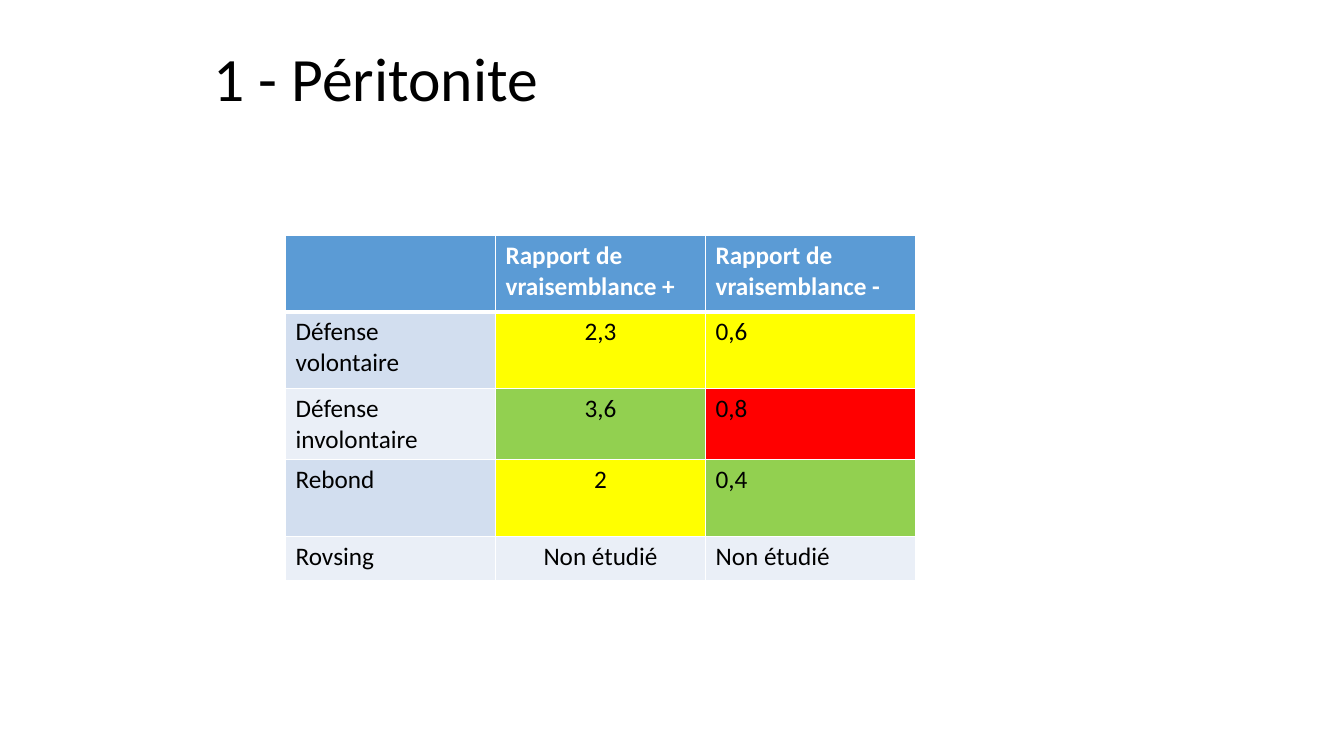
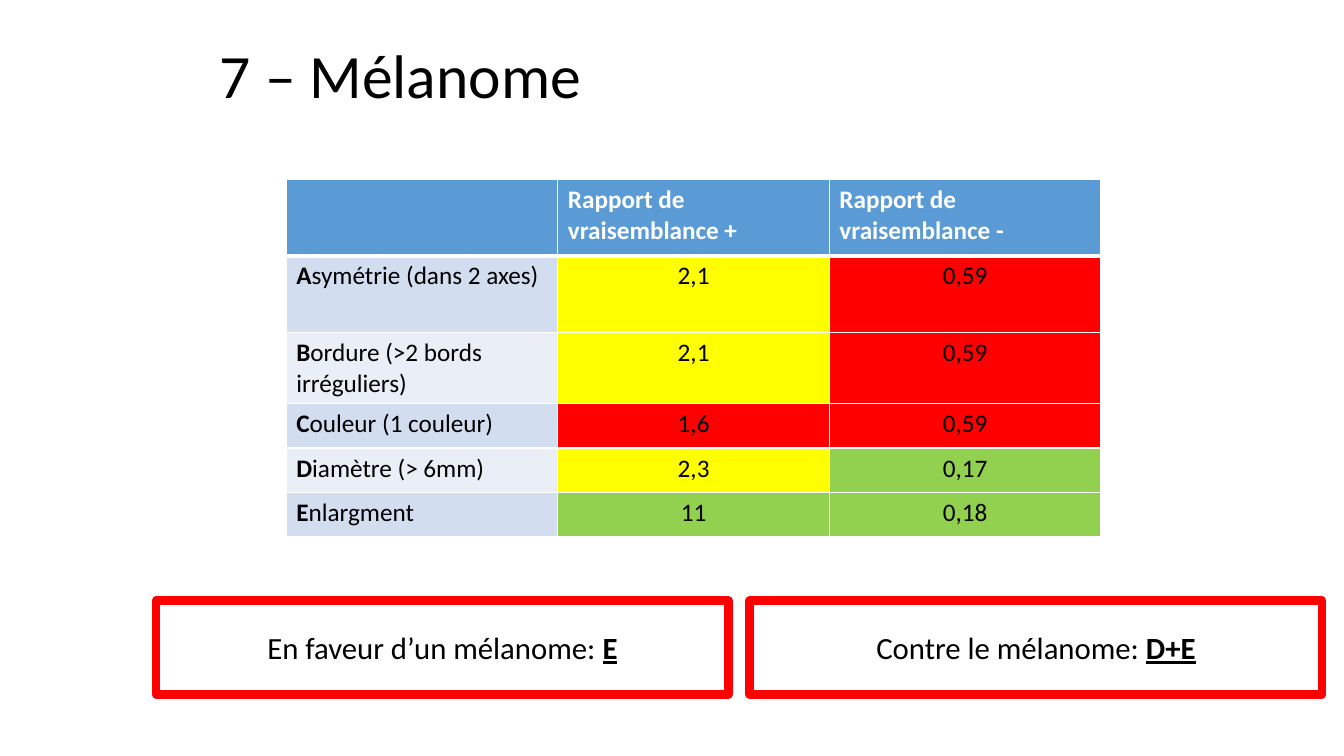
from dataclasses import dataclass

from lxml import etree
from pptx import Presentation
from pptx.dml.color import RGBColor
from pptx.enum import shapes, text
from pptx.oxml import ns
from pptx.util import Pt

# Shared style
FONT = "Calibri"
BLACK, WHITE = "000000", "FFFFFF"
HEADER = "5B9BD5"
BANDS = ("D2DEEF", "EAEFF7")
YELLOW, GREEN, RED = "FFFF00", "92D050", "FF0000"
TALL, WRAPPED, SHORT = 54.7, 51, 31.7  # row heights
HEADINGS = ("", "Rapport de vraisemblance +", "Rapport de vraisemblance -")
LEFT, CENTER = text.PP_ALIGN.LEFT, text.PP_ALIGN.CENTER


@dataclass
class Run:
    text: str
    bold: bool = False
    underline: bool = False


@dataclass
class Score:
    text: str
    fill: str | None = None  # None keeps the colour of the row band


@dataclass
class Sign:
    label: list[Run]
    positive: Score
    negative: Score
    height: float


@dataclass
class Conclusion:
    left: float
    label: str
    signs: str


def color(value: str) -> RGBColor:
    return RGBColor.from_string(value)


def write(frame, runs: list[Run], *, size: float = 18, ink: str = BLACK,
          align=LEFT, line_spacing: float | None = None) -> None:
    paragraph = frame.paragraphs[0]
    paragraph.alignment = align
    paragraph.line_spacing = line_spacing
    for part in runs:
        run = paragraph.add_run()
        run.text = part.text
        run.font.name = FONT
        run.font.size = Pt(size)
        run.font.color.rgb = color(ink)
        run.font.bold = part.bold
        run.font.underline = part.underline


def add_title(slide, title: str, left: float, top: float, width: float) -> None:
    box = slide.shapes.add_textbox(Pt(left), Pt(top), Pt(width), Pt(104))
    box.text_frame.word_wrap = True
    write(box.text_frame, [Run(title)], size=44, line_spacing=0.9)


def set_borders(cell, top: float, bottom: float) -> None:
    properties = cell._tc.get_or_add_tcPr()
    for side, width in (("L", 1), ("R", 1), ("T", top), ("B", bottom)):
        line = etree.SubElement(properties, ns.qn(f"a:ln{side}"), w=str(Pt(width)))
        fill = etree.SubElement(line, ns.qn("a:solidFill"))
        etree.SubElement(fill, ns.qn("a:srgbClr"), val=WHITE)


def fill_cell(cell, fill: str, runs: list[Run], *, top: float = 1,
              bottom: float = 1, **text_format) -> None:
    set_borders(cell, top, bottom)
    cell.fill.solid()
    cell.fill.fore_color.rgb = color(fill)
    write(cell.text_frame, runs, **text_format)


def add_sign_table(slide, signs: list[Sign], left: float, top: float,
                   column_width: float, negative_align) -> None:
    heights = [TALL] + [sign.height for sign in signs]
    frame = slide.shapes.add_table(
        len(heights), len(HEADINGS), Pt(left), Pt(top),
        Pt(column_width * len(HEADINGS)), Pt(sum(heights)))
    table = frame.table
    table.horz_banding = False
    for column in table.columns:
        column.width = Pt(column_width)
    for row, height in zip(table.rows, heights):
        row.height = Pt(height)

    # Header row
    for index, heading in enumerate(HEADINGS):
        runs = [Run(heading, bold=True)] if heading else []
        fill_cell(table.cell(0, index), HEADER, runs, bottom=3, ink=WHITE)

    # One row per clinical sign
    for row, sign in enumerate(signs, start=1):
        band = BANDS[(row - 1) % 2]
        line = 3 if row == 1 else 1
        fill_cell(table.cell(row, 0), band, sign.label, top=line)
        for index, (score, align) in enumerate(
                ((sign.positive, CENTER), (sign.negative, negative_align)), start=1):
            fill_cell(table.cell(row, index), score.fill or band,
                      [Run(score.text)], top=line, align=align)


def add_conclusion(slide, conclusion: Conclusion) -> None:
    box = slide.shapes.add_shape(shapes.MSO_SHAPE.RECTANGLE, Pt(conclusion.left),
                                 Pt(429), Pt(409), Pt(67))
    box.shadow.inherit = False
    box.fill.background()
    box.line.color.rgb = color(RED)
    box.line.width = Pt(6)
    box.text_frame.word_wrap = True
    box.text_frame.vertical_anchor = text.MSO_ANCHOR.MIDDLE
    write(box.text_frame,
          [Run(conclusion.label), Run(conclusion.signs, bold=True, underline=True)],
          size=22, align=CENTER)


def initial(label: str) -> list[Run]:
    return [Run(label[0], bold=True), Run(label[1:])]


PERITONITIS = [
    Sign([Run("Défense volontaire")], Score("2,3", YELLOW), Score("0,6", YELLOW), TALL),
    Sign([Run("Défense involontaire")], Score("3,6", GREEN), Score("0,8", RED), WRAPPED),
    Sign([Run("Rebond")], Score("2", YELLOW), Score("0,4", GREEN), TALL),
    Sign([Run("Rovsing")], Score("Non étudié"), Score("Non étudié"), SHORT),
]
MELANOMA = [
    Sign(initial("Asymétrie (dans 2 axes)"), Score("2,1", YELLOW), Score("0,59", RED), TALL),
    Sign(initial("Bordure (>2 bords irréguliers)"), Score("2,1", YELLOW),
         Score("0,59", RED), WRAPPED),
    Sign(initial("Couleur (1 couleur)"), Score("1,6", RED), Score("0,59", RED), SHORT),
    Sign(initial("Diamètre (> 6mm)"), Score("2,3", YELLOW), Score("0,17", GREEN), SHORT),
    Sign(initial("Enlargment"), Score("11", GREEN), Score("0,18", GREEN), SHORT),
]
CONCLUSIONS = [
    Conclusion(111.5, "En faveur d’un mélanome: ", "E"),
    Conclusion(535.5, "Contre le mélanome: ", "D+E"),
]


def main() -> None:
    presentation = Presentation()
    presentation.slide_width, presentation.slide_height = Pt(960), Pt(540)
    blank = presentation.slide_layouts[6]

    # Peritonitis
    slide = presentation.slides.add_slide(blank)
    add_title(slide, "1 - Péritonite", 145.5, 31, 828)
    add_sign_table(slide, PERITONITIS, 204, 168, 150, LEFT)

    # Melanoma
    slide = presentation.slides.add_slide(blank)
    add_title(slide, "7 – Mélanome", 150, 29, 744)
    add_sign_table(slide, MELANOMA, 204.5, 128, 194, CENTER)
    for conclusion in CONCLUSIONS:
        add_conclusion(slide, conclusion)

    presentation.save("out.pptx")


if __name__ == "__main__":
    main()
